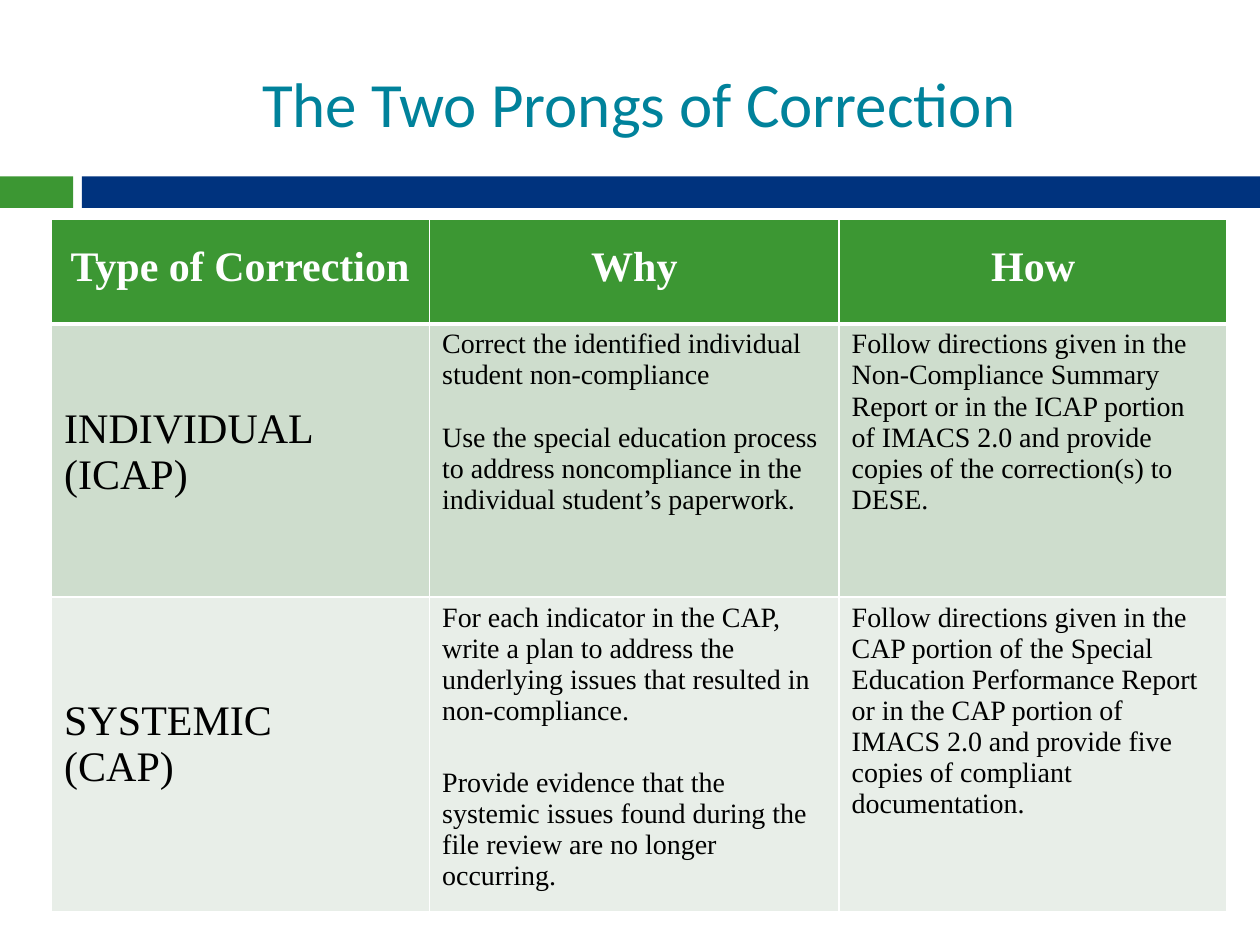
from lxml import etree
from pptx import Presentation
from pptx import util as u
from pptx.dml.color import RGBColor
from pptx.enum import shapes, text
from pptx.oxml.ns import qn

WHITE = RGBColor(0xFF, 0xFF, 0xFF)
BLACK = RGBColor(0x00, 0x00, 0x00)
TEAL = RGBColor(0x00, 0x82, 0x9B)
GREEN = RGBColor(0x3C, 0x97, 0x33)
NAVY = RGBColor(0x00, 0x33, 0x7E)
SAGE = RGBColor(0xCE, 0xDD, 0xCD)
MIST = RGBColor(0xE8, 0xEE, 0xE8)

COLUMNS = (30, 32.5, 30.8)
ROWS = (11.07, 28.93, 33.33)
HEADINGS = ("Type of Correction", "Why", "How")

# Each body row: fill, label, label offset in inches, then the Why and How
# cells as (space before, wording) paragraphs.
BODY = (
    (SAGE, "INDIVIDUAL (ICAP)", 0.65,
     ((0, "Correct the identified individual student non-compliance"),
      (18, "Use the special education process to address noncompliance in "
           "the individual student’s paperwork.")),
     ((0, "Follow directions given in the Non-Compliance Summary Report or "
          "in the ICAP portion of IMACS 2.0 and provide copies of the "
          "correction(s) to DESE."),)),
    (MIST, "SYSTEMIC (CAP)", 0.8,
     ((0, "For each indicator in the CAP, write a plan to address the "
          "underlying issues that resulted in non-compliance."),
      (23.4, "Provide evidence that the"),
      (0, "systemic issues found during the file review are no longer "
          "occurring.")),
     ((0, "Follow directions given in the CAP portion of the Special "
          "Education Performance Report or in the CAP portion of IMACS 2.0 "
          "and provide five copies of compliant documentation."),)),
)


class Page:
    """Holds the style and the slide; lengths are percentages of its size."""

    title_font = "Calibri"
    table_font = "Times New Roman"

    def __init__(self, deck):
        self.deck = deck
        self.slide = deck.slides.add_slide(deck.slide_layouts[5])

    def across(self, share):
        return round(self.deck.slide_width * share / 100)

    def down(self, share):
        return round(self.deck.slide_height * share / 100)

    def area(self, left, top, width, height):
        return (self.across(left), self.down(top),
                self.across(width), self.down(height))

    def add_span(self, para, wording, font, size, color, bold=False):
        span = para.add_run()
        span.text = wording
        span.font.name = font
        span.font.size = u.Pt(size)
        span.font.color.rgb = color
        span.font.bold = bold

    def title(self, wording, *area):
        box = self.slide.shapes.title
        box.left, box.top, box.width, box.height = self.area(*area)
        frame = box.text_frame
        frame.margin_left = frame.margin_right = frame.margin_bottom = 0
        frame.margin_top = u.Inches(0.01)
        frame.vertical_anchor = text.MSO_ANCHOR.TOP
        frame.word_wrap = False
        para = frame.paragraphs[0]
        para.alignment = text.PP_ALIGN.LEFT
        self.add_span(para, wording, self.title_font, 36, TEAL)

    def bar(self, color, *area):
        bar = self.slide.shapes.add_shape(
            shapes.MSO_SHAPE.RECTANGLE, *self.area(*area))
        bar.shadow.inherit = False
        bar.fill.solid()
        bar.fill.fore_color.rgb = color
        bar.line.fill.background()

    def table(self, left, top, columns, rows):
        frame = self.slide.shapes.add_table(
            len(rows), len(columns),
            *self.area(left, top, sum(columns), sum(rows)))
        table = frame.table
        for column, share in zip(table.columns, columns):
            column.width = self.across(share)
        for row, share in zip(table.rows, rows):
            row.height = self.down(share)
        return table

    def borders(self, cell, above, below):
        sides = (("a:lnL", 1), ("a:lnR", 1), ("a:lnT", above), ("a:lnB", below))
        properties = cell._tc.get_or_add_tcPr()
        for place, (side, points) in enumerate(sides):
            line = etree.Element(qn(side), w=str(u.Pt(points)))
            fill = etree.SubElement(line, qn("a:solidFill"))
            etree.SubElement(fill, qn("a:srgbClr"), val=str(WHITE))
            properties.insert(place, line)

    def cell(self, cell, fill, paragraphs, size, margins, color=BLACK,
             bold=False, align=text.PP_ALIGN.LEFT, above=1, below=1):
        """Fill one cell; margins are left, top and right in inches."""
        cell.fill.solid()
        cell.fill.fore_color.rgb = fill
        cell.margin_left, cell.margin_top, cell.margin_right = map(
            u.Inches, margins)
        cell.margin_bottom = 0
        cell.vertical_anchor = text.MSO_ANCHOR.TOP
        frame = cell.text_frame
        for index, (gap, wording) in enumerate(paragraphs):
            para = frame.add_paragraph() if index else frame.paragraphs[0]
            para.alignment = align
            para.space_before = u.Pt(gap)
            self.add_span(para, wording, self.table_font, size, color, bold)
        self.borders(cell, above, below)


def main():
    deck = Presentation()
    deck.slide_width, deck.slide_height = u.Inches(10), u.Inches(7.5)
    page = Page(deck)
    page.bar(GREEN, 0, 18.67, 5.8, 3.33)
    page.bar(NAVY, 6.5, 18.67, 93.5, 3.33)
    page.title("The Two Prongs of Correction", 20.8, 6.67, 59.9, 8.27)

    table = page.table(4.1, 23.2, COLUMNS, ROWS)
    for column, heading in enumerate(HEADINGS):
        page.cell(table.cell(0, column), GREEN, ((0, heading),), 24,
                  (0 if column else 0.15, 0.2, 0), WHITE, bold=True,
                  align=text.PP_ALIGN.CENTER if column else text.PP_ALIGN.LEFT,
                  below=3)
    for row, (fill, label, offset, why, how) in enumerate(BODY, start=1):
        above = 3 if row == 1 else 1
        cells = ((((0, label),), 24, (0.1, offset, 0.6)),
                 (why, 16, (0.1, 0.04, 0.14)),
                 (how, 16, (0.1, 0.04, 0.2)))
        for column, (paragraphs, size, margins) in enumerate(cells):
            page.cell(table.cell(row, column), fill, paragraphs, size, margins,
                      above=above)

    deck.save("out.pptx")


if __name__ == "__main__":
    main()
